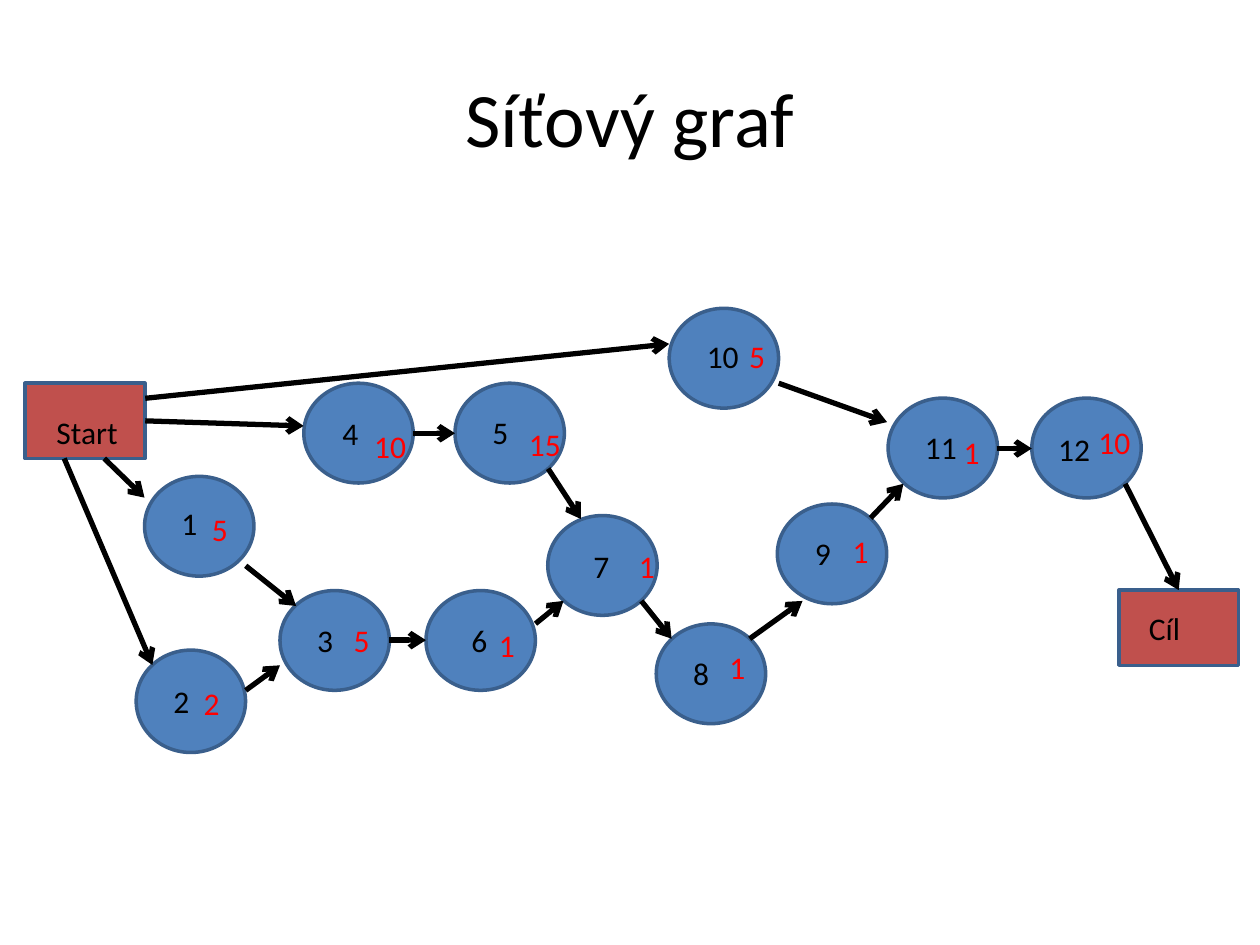
from lxml import etree
from pptx import Presentation
from pptx import util as u
from pptx.dml import color
from pptx.enum import shapes, text
from pptx.oxml import ns

TITLE = "Síťový graf"
FONT = "Calibri"
BLACK, RED, BLUE, BRICK, OUTLINE = "000000", "FF0000", "4F81BD", "C0504D", "3A5F8C"
NODE_WIDTH, NODE_HEIGHT = 62.5, 57
END_SIZE = (68.5, 43)
TEXT_HEIGHT = 29

NODES = [
    dict(name="1", at=(82.6, 272.2), name_at=(96.6, 284.6), days="5", days_at=(114, 288)),
    dict(name="2", at=(77.8, 371.5), name_at=(92, 386), days="2", days_at=(109.3, 387.5)),
    dict(name="3", at=(160, 337.5), name_at=(174.2, 351.5), days="5", days_at=(195, 351.5)),
    dict(name="4", at=(173.6, 219), name_at=(188.6, 233.2), days="10", days_at=(206.8, 240.5)),
    dict(name="5", at=(260, 219), name_at=(274.3, 232.5), days="15", days_at=(295.2, 239.2)),
    dict(name="6", at=(243.4, 337.5), name_at=(262.2, 351.5), days="1", days_at=(278, 354)),
    dict(name="7", at=(313, 294.6), name_at=(332, 308.8), days="1", days_at=(358, 308.8)),
    dict(name="8", at=(375, 356.5), name_at=(389, 370), days="1", days_at=(409.7, 367)),
    dict(name="9", at=(444.2, 288), name_at=(458.6, 301.6), days="1", days_at=(480.2, 300.2)),
    dict(name="10", at=(382.4, 176.2), name_at=(396.8, 189.2), days="5", days_at=(421, 189.2)),
    dict(name="11", at=(507.5, 227.5), name_at=(521.4, 241.2), days="1", days_at=(543.5, 244)),
    dict(name="12", at=(589.6, 227.5), name_at=(597.6, 242), days="10", days_at=(620.6, 238.3)),
]
ENDS = [
    dict(name="Start", at=(14.3, 219), name_at=(25.2, 232.5)),
    dict(name="Cíl", at=(639.3, 337.2), name_at=(649.4, 344.2)),
]
ARROWS = [
    ((59.6, 262), (82.6, 284.4)),
    ((36.7, 262), (87.1, 380)),
    ((83, 240.5), (173.5, 243.4)),
    ((83, 227.6), (382.4, 196.5)),
    ((140.4, 394.5), (160, 380.2)),
    ((140.4, 323.3), (169.2, 346.3)),
    ((236.2, 247.6), (260, 247.6)),
    ((222.5, 365.8), (243.4, 365.8)),
    ((306, 356.4), (322, 343.4)),
    ((313.2, 267.8), (332, 296.6)),
    ((366.5, 343.4), (383.8, 365)),
    ((428.4, 365), (458.6, 343.4)),
    ((445, 219), (506.9, 241.2)),
    ((497.5, 296), (516.2, 276.5)),
    ((569.5, 256.3), (589.6, 256.3)),
]
LAST_ARROW = ((643, 276.5), (673.55, 337.2))


def points(*values):
    return [u.Pt(value) for value in values]


def paint(target, hex_color):
    if hasattr(target, "solid"):
        target.solid()
        target = target.fore_color
    target.rgb = color.RGBColor.from_string(hex_color)


def write(box, words, size=18, ink=BLACK, align=text.PP_ALIGN.LEFT):
    para = box.text_frame.paragraphs[0]
    para.alignment = align
    span = para.add_run()
    span.text = words
    span.font.name = FONT
    span.font.size = u.Pt(size)
    paint(span.font.color, ink)


def add_label(page, words, corner, width, ink=BLACK):
    box = page.shapes.add_textbox(*points(*corner, width, TEXT_HEIGHT))
    box.text_frame.word_wrap = True
    box.text_frame.auto_size = text.MSO_AUTO_SIZE.SHAPE_TO_FIT_TEXT
    write(box, words, ink=ink)


def add_block(page, kind, corner, size, fill):
    block = page.shapes.add_shape(kind, *points(*corner, *size))
    block.shadow.inherit = False
    paint(block.fill, fill)
    paint(block.line.color, OUTLINE)
    block.line.width = u.Pt(2)
    return block


def add_arrow(page, start, finish):
    arrow = page.shapes.add_connector(shapes.MSO_CONNECTOR.STRAIGHT, *points(*start, *finish))
    paint(arrow.line.color, BLACK)
    arrow.line.width = u.Pt(3)
    properties = arrow.element.spPr
    line = properties.find(ns.qn("a:ln"))
    etree.SubElement(line, ns.qn("a:tailEnd"), type="arrow")
    etree.SubElement(properties, ns.qn("a:effectLst"))
    return arrow


def main():
    deck = Presentation()
    deck.slide_width, deck.slide_height = points(720, 540)
    page = deck.slides.add_slide(deck.slide_layouts[5])

    title = page.shapes.title
    title.left, title.top, title.width, title.height = points(36, 21.6, 648, 90)
    title.text_frame.vertical_anchor = text.MSO_ANCHOR.MIDDLE
    write(title, TITLE, size=44, align=text.PP_ALIGN.CENTER)

    for node in NODES:
        height = 58.5 if node["name"] == "2" else NODE_HEIGHT
        add_block(page, shapes.MSO_SHAPE.OVAL, node["at"], (NODE_WIDTH, height), BLUE)
    for node in NODES:
        add_label(page, node["name"], node["name_at"], 34)

    for end in ENDS:
        block = add_block(page, shapes.MSO_SHAPE.RECTANGLE, end["at"], END_SIZE, BRICK)
        add_label(page, end["name"], end["name_at"], 52.5)

    for start, finish in ARROWS:
        add_arrow(page, start, finish)
    add_arrow(page, *LAST_ARROW).end_connect(block, 0)

    for node in NODES:
        width = 51 if node["name"] == "12" else 16.5 + 10 * len(node["days"])
        add_label(page, node["days"], node["days_at"], width, ink=RED)

    deck.save("out.pptx")


if __name__ == "__main__":
    main()
